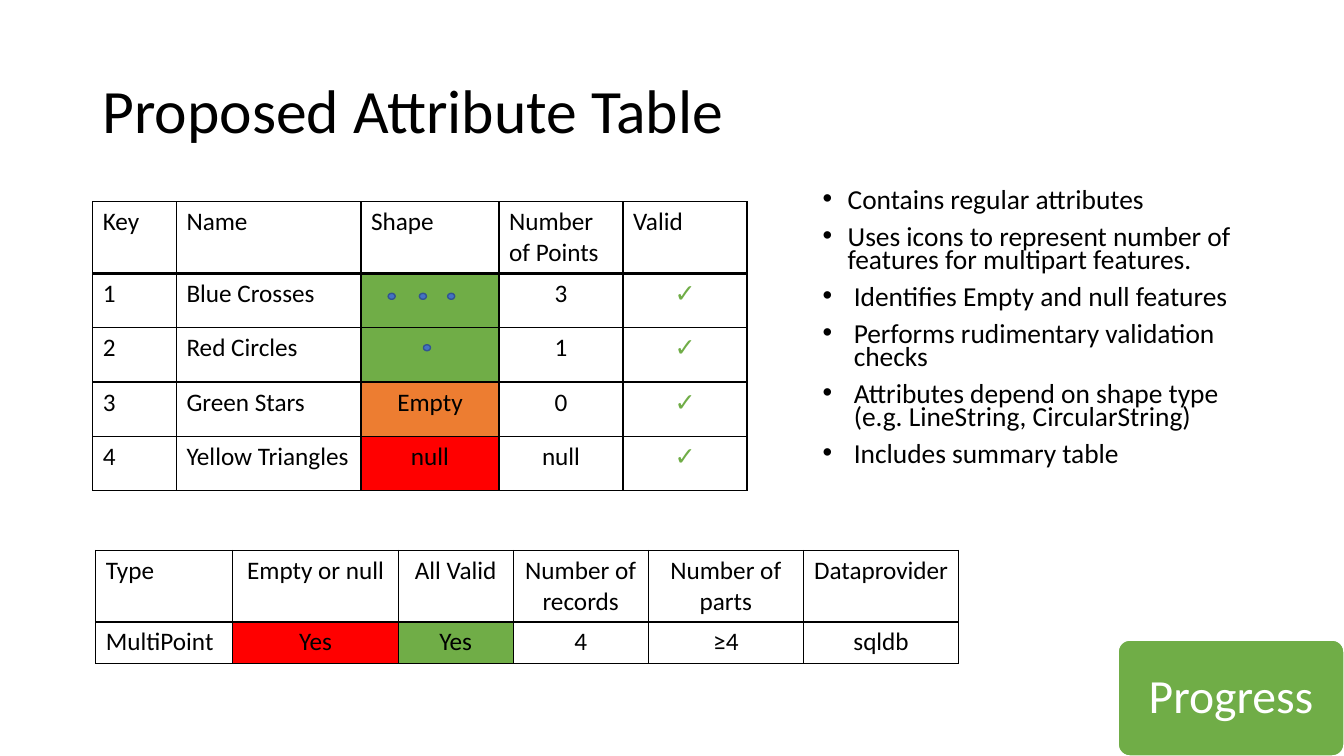
from dataclasses import dataclass

from lxml import etree
from pptx import Presentation
from pptx import util as u
from pptx.dml.color import RGBColor
from pptx.enum import shapes, text
from pptx.oxml import ns

FONT = "Calibri"
COLORS = {
    "text": "000000",
    "white": "FFFFFF",
    "green": "70AD47",
    "orange": "ED7D31",
    "red": "FF0000",
    "dot": "4472C4",
    "dot_line": "325491",
}
CHECK = "✓"
DOT_W, DOT_H = 0.07, 0.06


@dataclass
class TableSpec:
    left: float
    top: float
    widths: list[float]
    heights: list[float]
    rows: list[list[str]]
    fills: dict[tuple[int, int], str]
    centered_from: int
    center_header: bool


@dataclass
class Bullet:
    text: str
    indent: float


@dataclass
class Dot:
    left: float
    top: float


ATTRIBUTES = TableSpec(
    0.92, 2, [0.83, 1.83, 1.37, 1.23, 1.23], [0.71] + [0.54] * 4,
    [
        ["Key", "Name", "Shape", "Number of Points", "Valid"],
        ["1", "Blue Crosses", "", "3", CHECK],
        ["2", "Red Circles", "", "1", CHECK],
        ["3", "Green Stars", "Empty", "0", CHECK],
        ["4", "Yellow Triangles", "null", "null", CHECK],
    ],
    {(1, 2): "green", (2, 2): "green", (3, 2): "orange", (4, 2): "red"},
    centered_from=2, center_header=False,
)
SUMMARY = TableSpec(
    0.95, 5.46, [1.36, 1.64, 1.14, 1.34, 1.54, 1.54], [0.71, 0.41],
    [
        ["Type", "Empty or null", "All Valid", "Number of records",
         "Number of parts", "Dataprovider"],
        ["MultiPoint", "Yes", "Yes", "4", "≥4", "sqldb"],
    ],
    {(1, 1): "red", (1, 2): "green"},
    centered_from=1, center_header=True,
)
DOTS = [Dot(3.85, 2.91), Dot(4.16, 2.91), Dot(4.44, 2.91), Dot(4.2, 3.42)]
BULLETS = [
    Bullet("Contains regular attributes", 0.25),
    Bullet("Uses icons to represent number of features for multipart features.", 0.25),
    Bullet("Identifies Empty and null features", 0.31),
    Bullet("Performs rudimentary validation checks", 0.31),
    Bullet("Attributes depend on shape type (e.g. LineString, CircularString)", 0.31),
    Bullet("Includes summary table", 0.31),
]


def rgb(name: str) -> RGBColor:
    return RGBColor.from_string(COLORS[name])


def format_runs(p, size: float, color: str = "text") -> None:
    for r in p.runs:
        r.font.name = FONT
        r.font.size = u.Pt(size)
        r.font.color.rgb = rgb(color)


def add_text_box(slide, left: float, top: float, width: float, height: float):
    box = slide.shapes.add_textbox(*map(u.Inches, (left, top, width, height)))
    box.text_frame.word_wrap = True
    return box.text_frame


def add_filled_shape(slide, kind, left: float, top: float, width: float,
                     height: float, fill: str, line: str):
    sp = slide.shapes.add_shape(kind, *map(u.Inches, (left, top, width, height)))
    sp.shadow.inherit = False
    sp.fill.solid()
    sp.fill.fore_color.rgb = rgb(fill)
    sp.line.color.rgb = rgb(line)
    sp.line.width = u.Pt(1)
    return sp


def set_borders(cell, row: int) -> None:
    """Draw thin borders, with a heavier rule between header and body."""
    widths = {"lnL": 1, "lnR": 1,
              "lnT": 2.25 if row == 1 else 1,
              "lnB": 2.25 if row == 0 else 1}
    tc_pr = cell._tc.get_or_add_tcPr()
    for tag, width in widths.items():
        ln = etree.SubElement(tc_pr, ns.qn(f"a:{tag}"), w=str(u.Pt(width)))
        fill = etree.SubElement(ln, ns.qn("a:solidFill"))
        etree.SubElement(fill, ns.qn("a:srgbClr"), val=COLORS["text"])


def add_table(slide, spec: TableSpec) -> None:
    size = map(u.Inches, (spec.left, spec.top, sum(spec.widths), sum(spec.heights)))
    table = slide.shapes.add_table(len(spec.heights), len(spec.widths), *size).table
    table.first_row = table.horz_banding = False
    for column, width in zip(table.columns, spec.widths):
        column.width = u.Inches(width)
    for row, height in zip(table.rows, spec.heights):
        row.height = u.Inches(height)
    for i, values in enumerate(spec.rows):
        for j, value in enumerate(values):
            cell = table.cell(i, j)
            set_borders(cell, i)
            if (i, j) in spec.fills:
                cell.fill.solid()
                cell.fill.fore_color.rgb = rgb(spec.fills[i, j])
            else:
                cell.fill.background()
            cell.text_frame.text = value
            p = cell.text_frame.paragraphs[0]
            if j >= spec.centered_from and (i > 0 or spec.center_header):
                p.alignment = text.PP_ALIGN.CENTER
            format_runs(p, 18, "green" if value == CHECK else "text")


def add_title(slide) -> None:
    tf = add_text_box(slide, 0.92, 0.4, 11.5, 1.45)
    tf.vertical_anchor = text.MSO_ANCHOR.MIDDLE
    tf.text = "Proposed Attribute Table"
    p = tf.paragraphs[0]
    p.line_spacing = 0.9
    format_runs(p, 44)


def add_bullets(slide) -> None:
    tf = add_text_box(slide, 8.06, 1.85, 4.3, 3.47)
    for i, bullet in enumerate(BULLETS):
        p = tf.add_paragraph() if i else tf.paragraphs[0]
        p.text = bullet.text
        p.line_spacing = 0.7
        p.space_before = u.Pt(10)
        format_runs(p, 19.6)
        p_pr = p._p.get_or_add_pPr()
        p_pr.set("marL", str(u.Inches(bullet.indent)))
        p_pr.set("indent", str(-u.Inches(bullet.indent)))
        etree.SubElement(p_pr, ns.qn("a:buFont"), typeface="Arial")
        etree.SubElement(p_pr, ns.qn("a:buChar"), char="•")


def add_progress_button(slide) -> None:
    sp = add_filled_shape(slide, shapes.MSO_SHAPE.ROUNDED_RECTANGLE,
                          11.09, 6.35, 2.24, 1.15, "green", "white")
    sp.adjustments[0] = 0.1
    tf = sp.text_frame
    tf.vertical_anchor = text.MSO_ANCHOR.MIDDLE
    tf.text = "Progress"
    p = tf.paragraphs[0]
    p.alignment = text.PP_ALIGN.CENTER
    p.line_spacing = 0.9
    format_runs(p, 34, "white")


def main() -> None:
    prs = Presentation()
    prs.slide_width, prs.slide_height = u.Inches(13.33), u.Inches(7.5)
    slide = prs.slides.add_slide(prs.slide_layouts[6])
    add_title(slide)
    add_table(slide, ATTRIBUTES)
    for dot in DOTS:
        add_filled_shape(slide, shapes.MSO_SHAPE.OVAL, dot.left, dot.top,
                         DOT_W, DOT_H, "dot", "dot_line")
    add_bullets(slide)
    add_table(slide, SUMMARY)
    add_progress_button(slide)
    prs.save("out.pptx")


if __name__ == "__main__":
    main()
